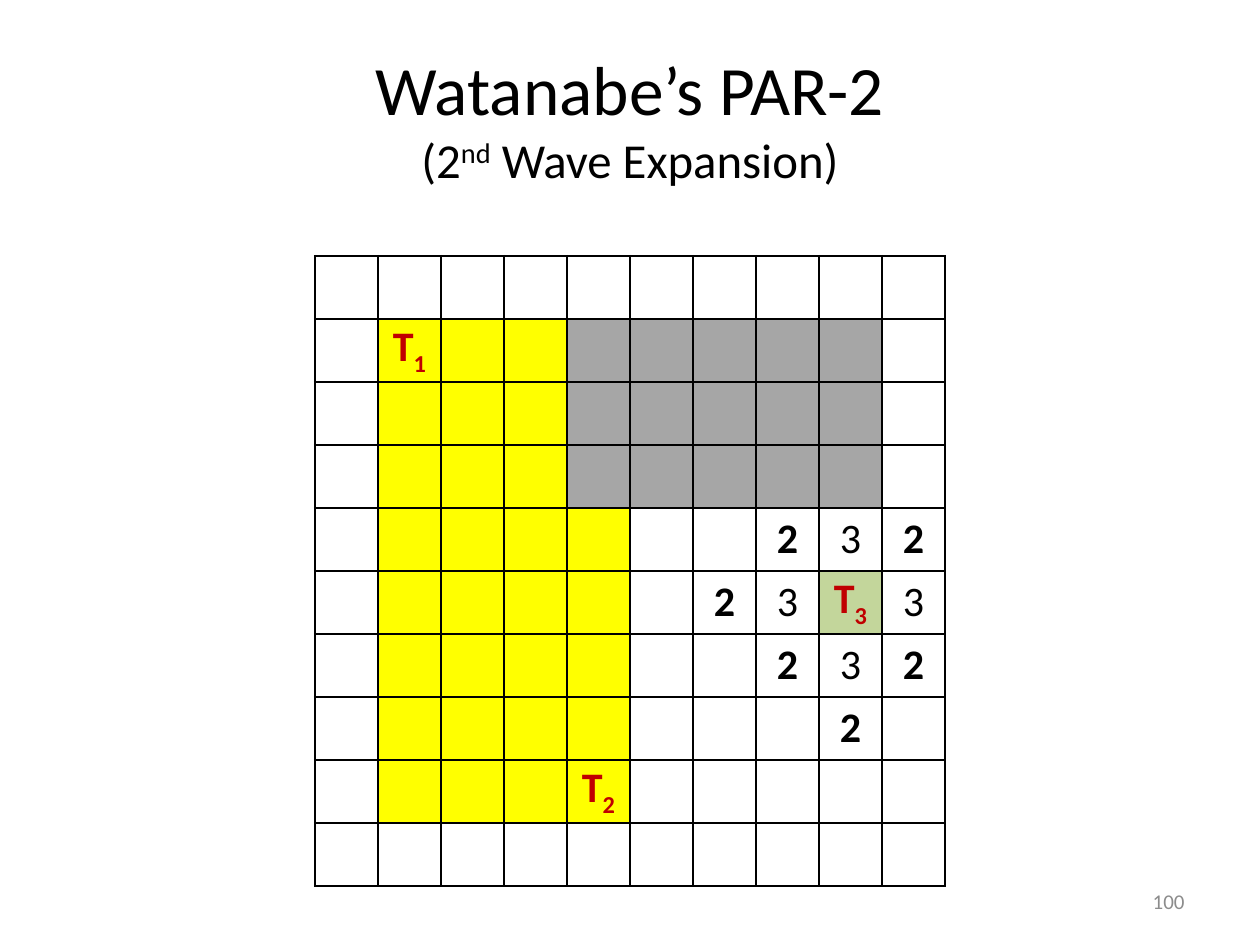
from lxml import etree
from pptx import Presentation
from pptx.dml.color import RGBColor
from pptx.enum.text import MSO_ANCHOR, PP_ALIGN
from pptx.oxml.ns import qn
from pptx.util import Emu, Pt

MIDDLE = MSO_ANCHOR.MIDDLE
CENTER, RIGHT = PP_ALIGN.CENTER, PP_ALIGN.RIGHT
SCALE = 914400 / 126
FONT = "Calibri"
COLORS = {
    "black": "000000",
    "red": "C00000",
    "page": "8C8C8C",
    ".": "FFFFFF",
    "y": "FFFF00",
    "g": "A6A6A6",
    "s": "C3D69B",
}
CELL = 63
GRID = [
    "..........",
    ".yyyggggg.",
    ".yyyggggg.",
    ".yyyggggg.",
    ".yyyy.....",
    ".yyyy...s.",
    ".yyyy.....",
    ".yyyy.....",
    ".yyyy.....",
    "..........",
]
TERMS = {(1, 1): "1", (8, 4): "2", (5, 8): "3"}
WAVES = {
    "3": [(4, 8), (5, 7), (5, 9), (6, 8)],
    "2": [(4, 7), (4, 9), (5, 6), (6, 7), (6, 9), (7, 8)],
}


def px(num):
    return Emu(round(num * SCALE))


def rgb(name):
    return RGBColor.from_string(COLORS[name])


def add_run(para, text, size, color="black", bold=False, base=0):
    """Add one run; base is the baseline shift in percent."""
    run = para.add_run()
    run.text = text
    font = run.font
    font.name, font.size, font.bold = FONT, Pt(size), bold
    font.color.rgb = rgb(color)
    if base:
        run._r.get_or_add_rPr().set("baseline", str(base * 1000))


def add_box(slide, left, top, width, height, align):
    """Add a text box and return its first paragraph."""
    box = slide.shapes.add_textbox(px(left), px(top), px(width), px(height))
    frame = box.text_frame
    frame.word_wrap = True
    frame.vertical_anchor = MIDDLE
    para = frame.paragraphs[0]
    para.alignment = align
    return para


def add_title(slide):
    para = add_box(slide, 63, 38, 1134, 158, CENTER)
    add_run(para, "Watanabe’s PAR-2", 39.6)
    para.add_line_break()
    add_run(para, "(2", 27.9)
    add_run(para, "nd", 27.9, base=30)
    add_run(para, " Wave Expansion)", 27.9)


def set_edges(cell):
    props = cell._tc.get_or_add_tcPr()
    for spot, side in enumerate(("lnL", "lnR", "lnT", "lnB")):
        line = etree.Element(qn("a:" + side), w=str(Pt(1.5)))
        fill = etree.SubElement(line, qn("a:solidFill"))
        etree.SubElement(fill, qn("a:srgbClr"), val=COLORS["black"])
        props.insert(spot, line)


def style_cell(cell, kind):
    cell.fill.solid()
    cell.fill.fore_color.rgb = rgb(kind)
    cell.margin_left = cell.margin_right = 0
    cell.margin_top = cell.margin_bottom = 0
    cell.vertical_anchor = MIDDLE
    cell.text_frame.paragraphs[0].alignment = CENTER
    set_edges(cell)


def add_grid(slide, left, top):
    count = len(GRID)
    side = px(count * CELL)
    table = slide.shapes.add_table(
        count, count, px(left), px(top), side, side).table
    table.first_row = table.horz_banding = False
    for line in (*table.columns, *table.rows):
        if hasattr(line, "width"):
            line.width = px(CELL)
        else:
            line.height = px(CELL)
    for row, kinds in enumerate(GRID):
        for col, kind in enumerate(kinds):
            style_cell(table.cell(row, col), kind)
    return table


def fill_grid(table):
    """Write the terminals and the wave numbers."""
    for spot, num in TERMS.items():
        para = table.cell(*spot).text_frame.paragraphs[0]
        add_run(para, "T", 24, "red", True)
        add_run(para, num, 24, "red", True, -25)
    for num, spots in WAVES.items():
        for spot in spots:
            para = table.cell(*spot).text_frame.paragraphs[0]
            add_run(para, num, 24, bold=num == "2")


def main():
    deck = Presentation()
    deck.slide_width, deck.slide_height = px(1260), px(945)
    slide = deck.slides.add_slide(deck.slide_layouts[6])
    add_title(slide)
    fill_grid(add_grid(slide, 315, 256))
    add_run(add_box(slide, 903, 876, 294, 50, RIGHT), "100", 12, "page")
    deck.save("out.pptx")


if __name__ == "__main__":
    main()
